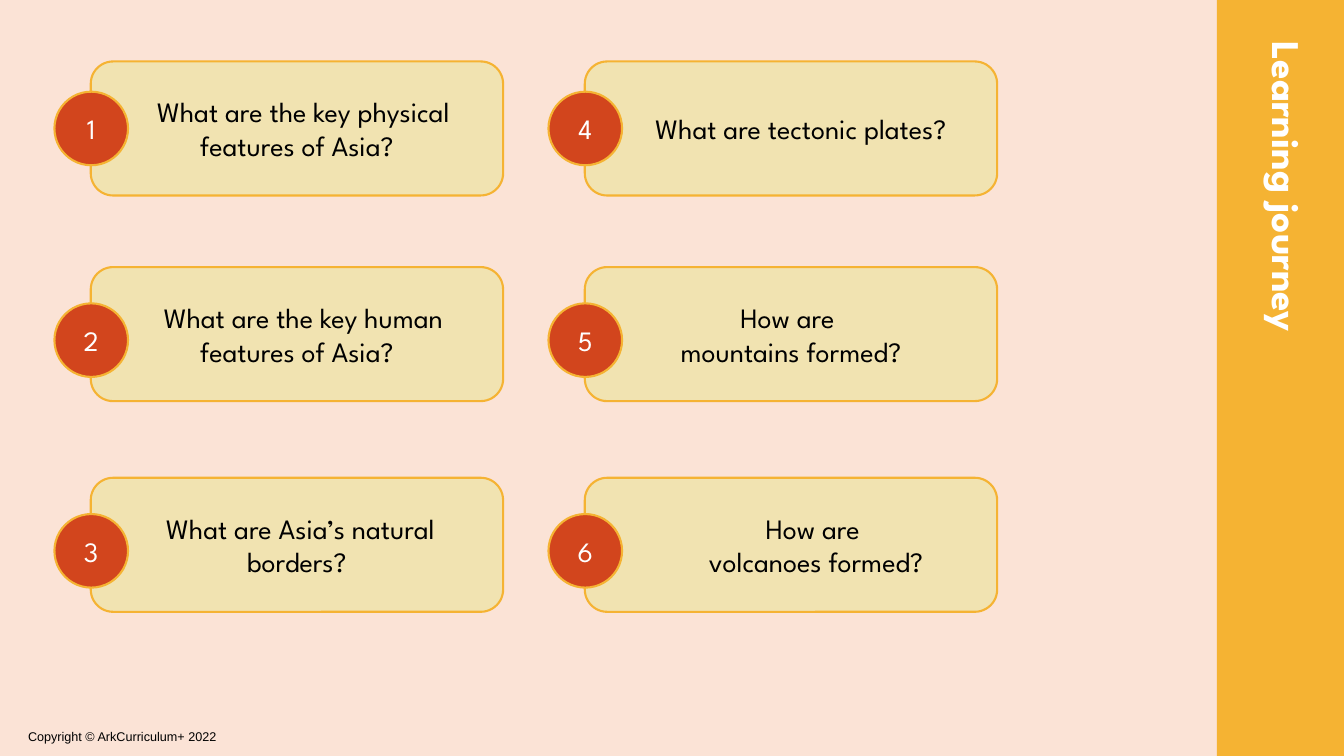
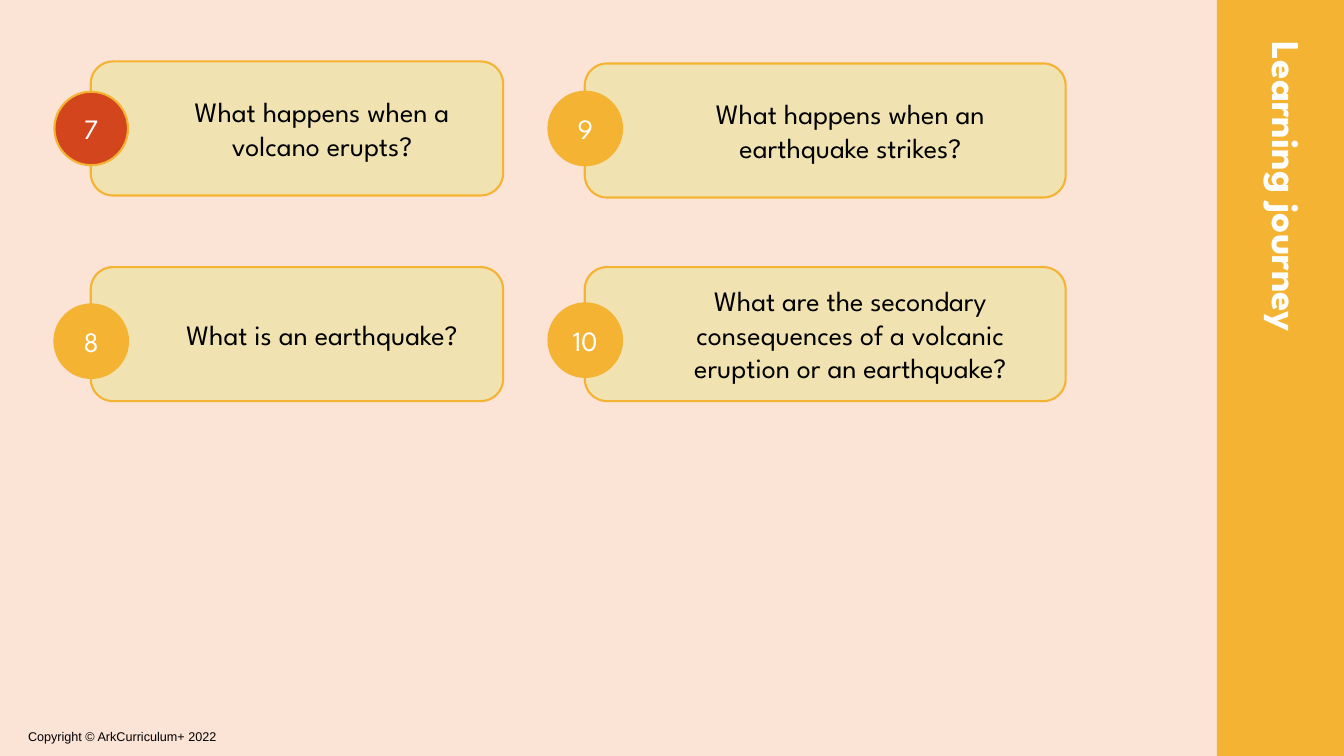
from dataclasses import dataclass

from pptx import Presentation
from pptx import util as u
from pptx.dml import color
from pptx.enum import shapes, text

PX = 9144
SLIDE_W, SLIDE_H = 1333, 750
COLOURS = {"background": "FBE3D6", "card": "F1E3B1", "gold": "F5B333",
           "red": "D2451D", "ink": "000000", "white": "FFFFFF"}
HEADING_FONT = "League Spartan"
TITLE_FONT = {"name": HEADING_FONT, "size": u.Pt(28), "bold": True}
BODY_FONT = {"name": HEADING_FONT, "size": u.Pt(20)}
FOOTER_FONT = {"name": "Arial", "size": u.Pt(9)}
LEFT_ALIGNED = {"alignment": text.PP_ALIGN.LEFT}
CENTRED = {"alignment": text.PP_ALIGN.CENTER}
TITLE_PARAGRAPH = {**LEFT_ALIGNED, "line_spacing": 0.9}

COLUMNS = (90, 580)
CARD_TOPS = (61, 265, 474)
BADGE_TOPS = (91, 301, 510)
CARD_H, BADGE_SIZE = 133, 73


@dataclass
class Question:
    wording: str
    margin: int = 0
    indent: int = 0
    badge: str = "red"
    card_shift: int = 0
    badge_shift: int = 0


JOURNEY = (
    {"widths": (409, 409), "columns": (
        (Question("What are the key physical features of Asia?", indent=13),
         Question("What are the key human features of Asia?", indent=13),
         Question("What are Asia’s natural borders?", indent=7)),
        (Question("What are tectonic plates?", indent=20),
         Question("How are \vmountains formed?"),
         Question("How are \vvolcanoes formed?", margin=50)))},
    {"widths": (409, 477), "columns": (
        (Question("What happens when a volcano erupts?", margin=50),
         Question("What is an earthquake?", margin=50, badge="gold",
                  badge_shift=1)),
        (Question("What happens when an earthquake strikes?", margin=50,
                  badge="gold", card_shift=2),
         Question("What are the secondary consequences of a volcanic "
                  "eruption or an earthquake?", margin=50, badge="gold")))},
)


def emu(*lengths):
    return [length * PX for length in lengths]


def rgb(colour):
    return color.RGBColor.from_string(COLOURS[colour])


def apply(target, values):
    for attribute, value in values.items():
        setattr(target, attribute, value)


def write(frame, wording, font, colour, layout):
    frame.text = wording
    paragraph = frame.paragraphs[0]
    apply(paragraph, layout)
    apply(paragraph.font, font)
    paragraph.font.color.rgb = rgb(colour)
    return paragraph


def add_block(slide, preset, box, fill, outline=None):
    block = slide.shapes.add_shape(preset, *emu(*box))
    block.shadow.inherit = False
    block.fill.solid()
    block.fill.fore_color.rgb = rgb(fill)
    if outline:
        block.line.color.rgb = rgb(outline)
        block.line.width = u.Pt(1.5)
    else:
        block.line.fill.background()
    return block


def add_title_band(slide, box):
    left, top, width, height = box
    add_block(slide, shapes.MSO_SHAPE.RECTANGLE, box, "gold")
    title = slide.shapes.title
    length, depth = 493, 60
    title_box = emu(left + width // 2 - length // 2, top + 248, length, depth)
    apply(title, dict(zip(("left", "top", "width", "height"), title_box)))
    title.rotation = 90
    apply(title.text_frame, {"vertical_anchor": text.MSO_ANCHOR.TOP,
                             "auto_size": text.MSO_AUTO_SIZE.NONE,
                             "word_wrap": True})
    write(title.text_frame, "Learning journey", TITLE_FONT, "white",
          TITLE_PARAGRAPH)
    title.element.getparent().append(title.element)


def add_footer(slide, box):
    frame = slide.shapes.add_textbox(*emu(*box)).text_frame
    apply(frame, {"word_wrap": True,
                  "auto_size": text.MSO_AUTO_SIZE.SHAPE_TO_FIT_TEXT})
    write(frame, "Copyright © ArkCurriculum+ 2022", FOOTER_FONT, "ink",
          LEFT_ALIGNED)


def add_question(slide, box, badge_top, number, question):
    card = add_block(slide, shapes.MSO_SHAPE.ROUNDED_RECTANGLE, box,
                     "card", "gold")
    paragraph = write(card.text_frame, question.wording, BODY_FONT, "ink",
                      CENTRED)
    properties = paragraph._p.get_or_add_pPr()
    properties.set("marL", str(question.margin * PX))
    properties.set("indent", str(question.indent * PX))
    badge_box = (box[0] - BADGE_SIZE // 2, badge_top, BADGE_SIZE, BADGE_SIZE)
    badge = add_block(slide, shapes.MSO_SHAPE.OVAL, badge_box,
                      question.badge, "gold")
    write(badge.text_frame, str(number), BODY_FONT, "white", CENTRED)


def add_journey_slide(deck, widths, columns, number):
    slide = deck.slides.add_slide(deck.slide_layouts[5])
    slide.background.fill.solid()
    slide.background.fill.fore_color.rgb = rgb("background")
    for left, width, questions in zip(COLUMNS, widths, columns):
        for card_top, badge_top, question in zip(CARD_TOPS, BADGE_TOPS,
                                                 questions):
            box = (left, card_top + question.card_shift, width, CARD_H)
            add_question(slide, box, badge_top + question.badge_shift,
                         number, question)
            number += 1
    add_title_band(slide, (1207, 0, 126, SLIDE_H))
    add_footer(slide, (18, 718, 400, 25))
    return number


def main():
    deck = Presentation()
    deck.slide_width, deck.slide_height = emu(SLIDE_W, SLIDE_H)
    number = 1
    for stage in JOURNEY:
        number = add_journey_slide(deck, **stage, number=number)
    deck.save("out.pptx")


if __name__ == "__main__":
    main()
